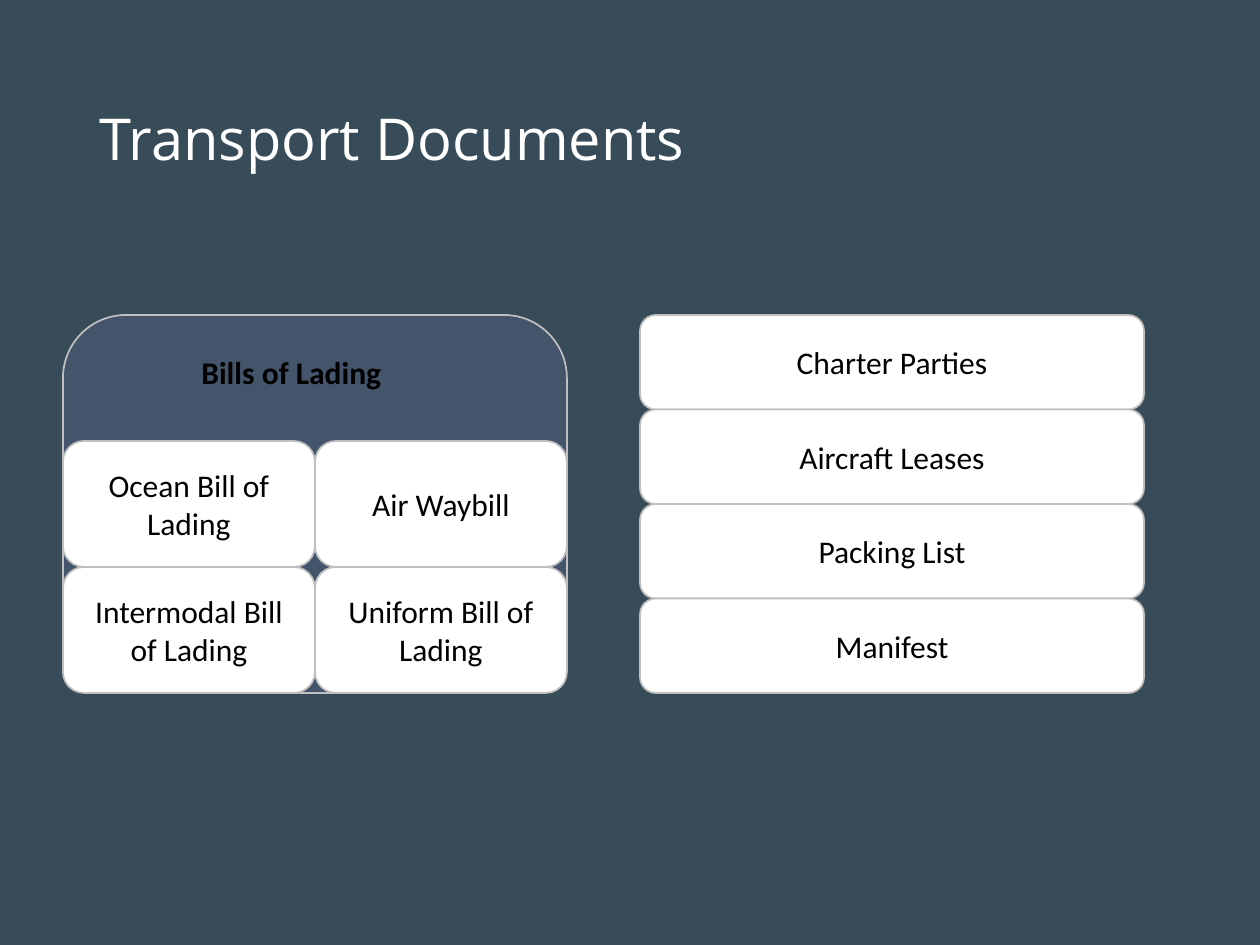
import pptx
import pptx.util
import pptx.dml.color
import pptx.enum.shapes
import pptx.enum.text
from dataclasses import dataclass

EMU_PER_PX = 9144  # 100 px to the inch


@dataclass(frozen=True)
class Theme:
    background: str = "384B59"
    panel: str = "44546A"
    card: str = "FFFFFF"
    border: str = "BFBFBF"
    title_color: str = "FFFFFF"
    text_color: str = "000000"
    title_font: str = "Open Sans"
    body_font: str = "Calibri"
    title_size: int = 33
    body_size: int = 18
    border_width: int = 1


THEME = Theme()
BODY_FORMAT = {"name": THEME.body_font, "size": pptx.util.Pt(THEME.body_size)}
TITLE_FORMAT = {"name": THEME.title_font, "size": pptx.util.Pt(THEME.title_size)}

BILLS = ["Ocean Bill of Lading", "Air Waybill",
         "Intermodal Bill of Lading", "Uniform Bill of Lading"]
OTHER_DOCUMENTS = ["Charter Parties", "Aircraft Leases", "Packing List", "Manifest"]


def px(value):
    return pptx.util.Emu(value * EMU_PER_PX)


def rgb(value):
    return pptx.dml.color.RGBColor.from_string(value)


def write(shape, text, color, font_format, anchor, alignment):
    """Put one formatted paragraph into a shape."""
    frame = shape.text_frame
    frame.word_wrap = True
    frame.vertical_anchor = anchor
    paragraph = frame.paragraphs[0]
    paragraph.alignment = alignment
    run = paragraph.add_run()
    run.text = text
    for name, value in font_format.items():
        setattr(run.font, name, value)
    run.font.color.rgb = rgb(color)
    return paragraph


def add_title(slide, text, left, top, width, height):
    title = slide.shapes.title
    box = {"left": left, "top": top, "width": width, "height": height}
    for name, value in box.items():
        setattr(title, name, px(value))
    paragraph = write(title, text, THEME.title_color, TITLE_FORMAT,
                      pptx.enum.text.MSO_ANCHOR.MIDDLE, pptx.enum.text.PP_ALIGN.LEFT)
    paragraph.line_spacing = 0.9


def add_rounded_box(slide, left, top, width, height, fill):
    shape = slide.shapes.add_shape(
        pptx.enum.shapes.MSO_SHAPE.ROUNDED_RECTANGLE,
        px(left), px(top), px(width), px(height))
    shape.shadow.inherit = False
    shape.fill.solid()
    shape.fill.fore_color.rgb = rgb(fill)
    shape.line.color.rgb = rgb(THEME.border)
    shape.line.width = pptx.util.Pt(THEME.border_width)
    return shape


def add_card_grid(slide, labels, columns, left, top, width, height):
    """Lay out touching cards, row by row."""
    for index, label in enumerate(labels):
        row, column = divmod(index, columns)
        card = add_rounded_box(slide, left + column * width, top + row * height,
                               width, height, THEME.card)
        write(card, label, THEME.text_color, BODY_FORMAT,
              pptx.enum.text.MSO_ANCHOR.MIDDLE, pptx.enum.text.PP_ALIGN.CENTER)


def add_heading(slide, text, left, top, width, height):
    box = slide.shapes.add_textbox(px(left), px(top), px(width), px(height))
    write(box, text, THEME.text_color, {**BODY_FORMAT, "bold": True},
          pptx.enum.text.MSO_ANCHOR.TOP, pptx.enum.text.PP_ALIGN.LEFT)
    box.text_frame.auto_size = pptx.enum.text.MSO_AUTO_SIZE.SHAPE_TO_FIT_TEXT


def main():
    presentation = pptx.Presentation()
    presentation.slide_width = px(1000)
    presentation.slide_height = px(750)
    slide = presentation.slides.add_slide(presentation.slide_layouts[5])
    slide.background.fill.solid()
    slide.background.fill.fore_color.rgb = rgb(THEME.background)

    add_title(slide, "Transport Documents", 69, 40, 862, 145)

    # Bills of lading: panel, two-by-two cards and heading
    add_rounded_box(slide, 50, 250, 400, 300, THEME.panel)
    add_card_grid(slide, BILLS, 2, 50, 350, 200, 100)
    add_heading(slide, "Bills of Lading", 150, 275, 201, 40)

    # Other transport documents: one column
    add_card_grid(slide, OTHER_DOCUMENTS, 1, 508, 250, 400, 75)

    presentation.save("out.pptx")


if __name__ == "__main__":
    main()
